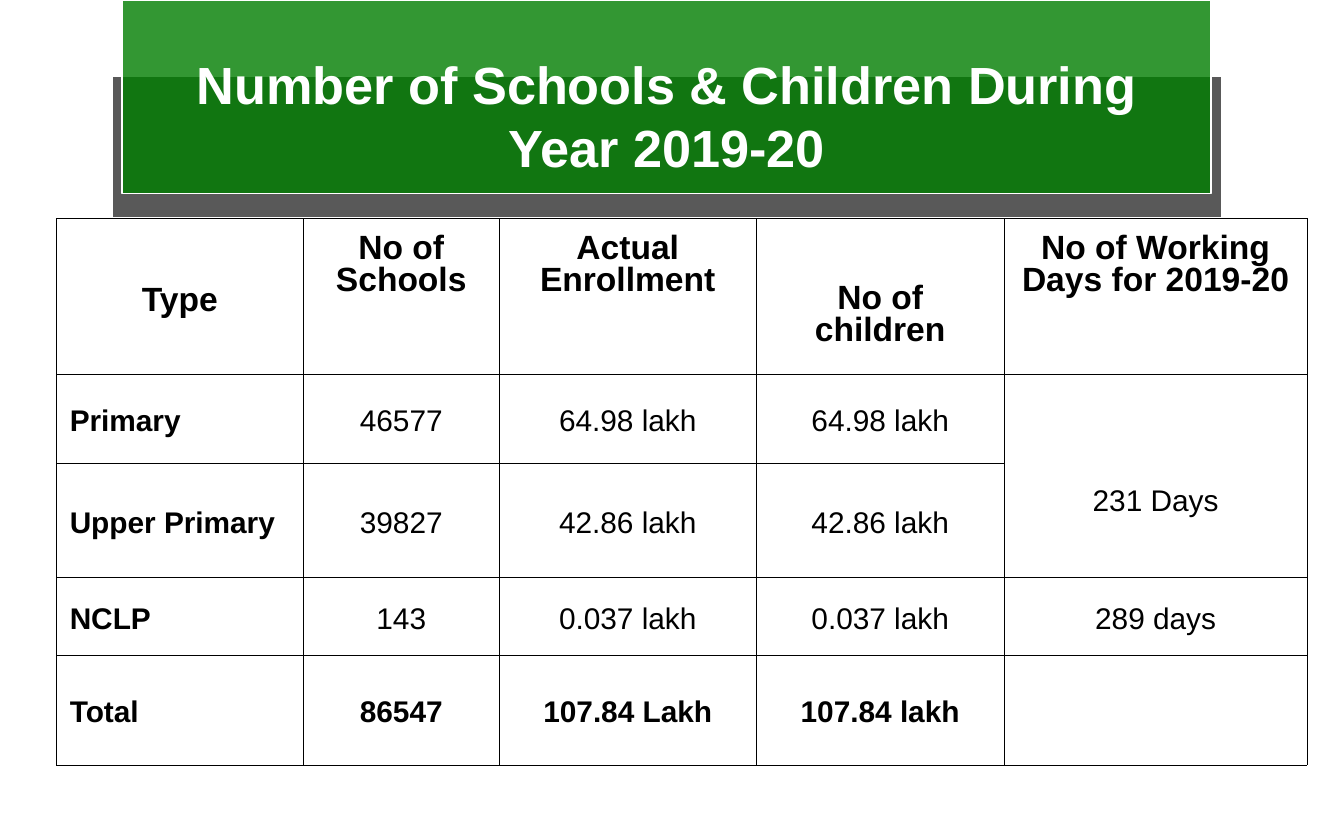
from dataclasses import dataclass

from lxml import etree
from pptx import Presentation
from pptx.dml.color import RGBColor
from pptx.enum import shapes, text
from pptx.oxml import ns
from pptx.util import Pt

COLORS = {"white": "FFFFFF", "black": "000000", "green": "007E00", "gray": "595959"}
FONT = "Arial"
BORDER_WIDTH = Pt(0.25)
TOP_MARGIN = 7.9


@dataclass(frozen=True)
class Panel:
    left: float
    top: float
    width: float
    height: float
    color: str
    opacity: int = 100


PANELS = [
    Panel(59.8, 41, 594.7, 75.6, "gray"),
    Panel(65.5, 0, 583.2, 103.7, "green", 80),
]
TITLE = "Number of Schools & Children During Year 2019-20"
COLUMN_WIDTHS = [132.4, 104.8, 137.9, 132.6, 162.5]
ROW_HEIGHTS = [83.5, 48, 61.1, 41.5, 59]
ROWS = [
    ["Type", "No of Schools", "Actual Enrollment", "No of children", "No of Working Days for 2019-20"],
    ["Primary", "46577", "64.98 lakh", "64.98 lakh", "231 Days"],
    ["Upper Primary", "39827", "42.86 lakh", "42.86 lakh", ""],
    ["NCLP", "143", "0.037 lakh", "0.037 lakh", "289 days"],
    ["Total", "86547", "107.84 Lakh", "107.84 lakh", ""],
]
LOWERED_CELLS = {(0, 0): 28, (0, 3): 26.8, (1, 4): 25}


def rgb(name: str) -> RGBColor:
    return RGBColor.from_string(COLORS[name])


def write_text(frame, content: str, *, size: float, color: str = "black", bold: bool = False,
               align=text.PP_ALIGN.CENTER, line_spacing: float = 1.0, space_before: float = 0) -> None:
    frame.word_wrap = True
    paragraph = frame.paragraphs[0]
    paragraph.alignment = align
    paragraph.line_spacing = line_spacing
    paragraph.space_before = Pt(space_before)
    run = paragraph.add_run()
    run.text = content
    run.font.name = FONT
    run.font.size = Pt(size)
    run.font.bold = bold
    run.font.color.rgb = rgb(color)


def draw_panel(group, panel: Panel) -> None:
    shape = group.shapes.add_shape(shapes.MSO_SHAPE.RECTANGLE, Pt(panel.left), Pt(panel.top),
                                   Pt(panel.width), Pt(panel.height))
    shape.shadow.inherit = False
    shape.fill.solid()
    shape.fill.fore_color.rgb = rgb(panel.color)
    shape.line.color.rgb = rgb("white")
    shape.line.width = Pt(1)
    if panel.opacity < 100:
        color = shape._element.spPr.find(ns.qn("a:solidFill"))[0]
        etree.SubElement(color, ns.qn("a:alpha"), val=str(panel.opacity * 1000))


def draw_header(slide) -> None:
    group = slide.shapes.add_group_shape()
    for panel in PANELS:
        draw_panel(group, panel)
    title = group.shapes.add_textbox(Pt(65.5), Pt(24.5), Pt(583.2), Pt(74.9))
    write_text(title.text_frame, TITLE, size=28, color="white", bold=True)


def style_cell(cell) -> None:
    properties = cell._tc.get_or_add_tcPr()
    for side in ("lnL", "lnR", "lnT", "lnB"):
        line = etree.SubElement(properties, ns.qn(f"a:{side}"), w=str(BORDER_WIDTH))
        fill = etree.SubElement(line, ns.qn("a:solidFill"))
        etree.SubElement(fill, ns.qn("a:srgbClr"), val=COLORS["black"])
    cell.fill.solid()
    cell.fill.fore_color.rgb = rgb("white")


def draw_table(slide) -> None:
    frame = slide.shapes.add_table(len(ROWS), len(COLUMN_WIDTHS), Pt(30.2), Pt(116.9),
                                   Pt(sum(COLUMN_WIDTHS)), Pt(sum(ROW_HEIGHTS)))
    table = frame.table
    table.first_row = table.horz_banding = False
    for column, width in zip(table.columns, COLUMN_WIDTHS):
        column.width = Pt(width)
    for row, height in zip(table.rows, ROW_HEIGHTS):
        row.height = Pt(height)
    table.cell(1, 4).merge(table.cell(2, 4))

    for row_index, row in enumerate(ROWS):
        is_header = row_index == 0
        is_total = row_index == len(ROWS) - 1
        for column_index, content in enumerate(row):
            cell = table.cell(row_index, column_index)
            style_cell(cell)
            if not content:
                continue
            is_label = column_index == 0
            drop = LOWERED_CELLS.get((row_index, column_index), 0)
            cell.margin_top = Pt(TOP_MARGIN + drop)
            cell.vertical_anchor = text.MSO_ANCHOR.TOP if is_header else text.MSO_ANCHOR.MIDDLE
            write_text(
                cell.text_frame, content,
                size=18 if is_header else 16,
                bold=is_header or is_total or is_label,
                align=text.PP_ALIGN.LEFT if is_label and not is_header else text.PP_ALIGN.CENTER,
                line_spacing=0.87, space_before=5,
            )


def main() -> None:
    presentation = Presentation()
    presentation.slide_width = Pt(720)
    presentation.slide_height = Pt(450)
    slide = presentation.slides.add_slide(presentation.slide_layouts[6])
    draw_header(slide)
    draw_table(slide)
    presentation.save("out.pptx")


if __name__ == "__main__":
    main()
